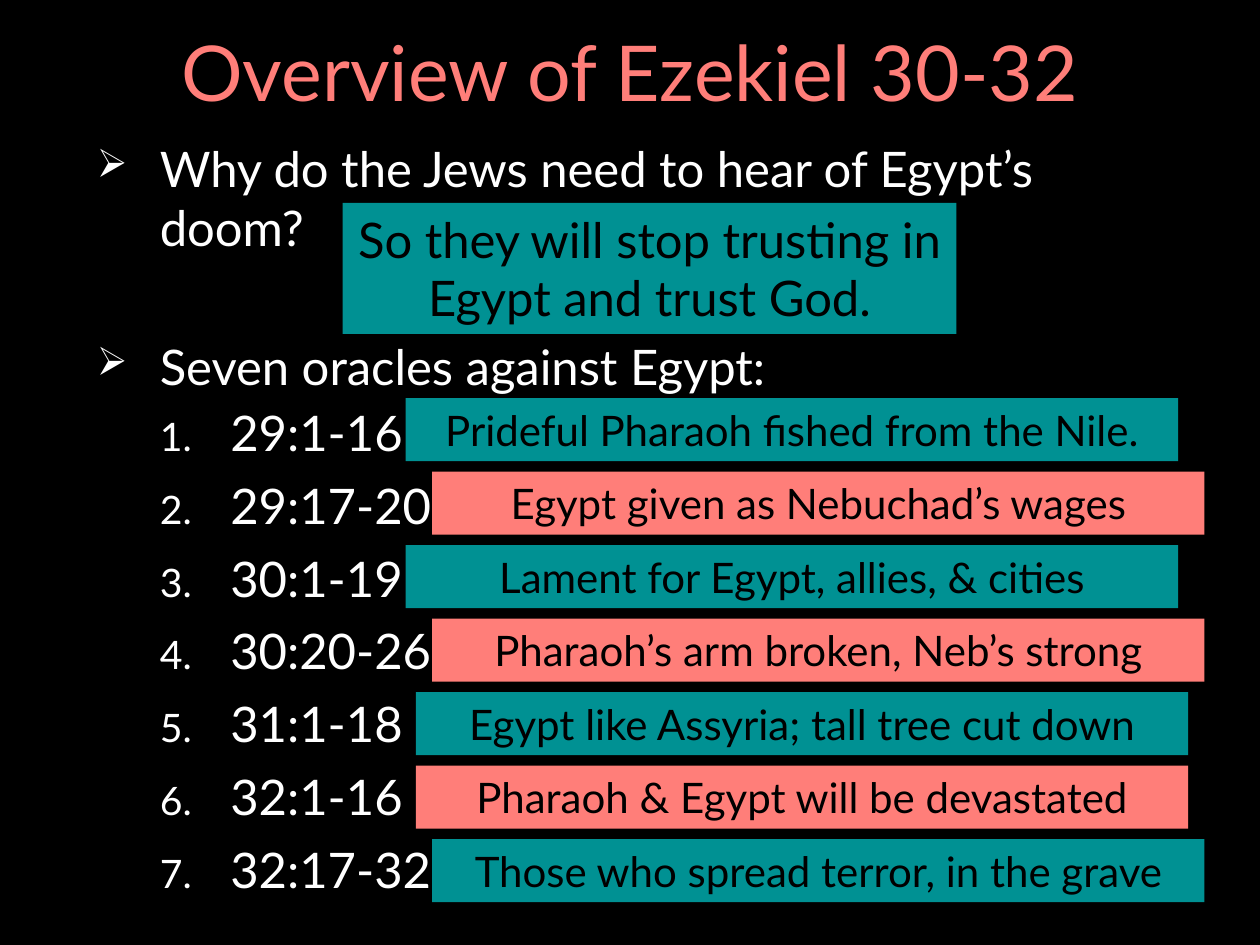
import pptx
import pptx.dml.color
import pptx.enum.shapes
import pptx.enum.text
import pptx.oxml.ns
import pptx.util
import lxml.etree
from dataclasses import dataclass

Inches, Pt = pptx.util.Inches, pptx.util.Pt
RGB = pptx.dml.color.RGBColor
CENTER = pptx.enum.text.PP_ALIGN.CENTER
MIDDLE = pptx.enum.text.MSO_ANCHOR.MIDDLE


@dataclass
class Theme:
    font: str = "Lato"
    black: RGB = RGB(0, 0, 0)
    white: RGB = RGB(255, 255, 255)
    teal: RGB = RGB(0x00, 0x91, 0x93)
    coral: RGB = RGB(0xFF, 0x7E, 0x79)
    title: int = 44
    body: int = 28
    label: int = 24


theme = Theme()


def style(para, size, color):
    para.font.name = theme.font
    para.font.size = Pt(size)
    para.font.color.rgb = color


def add_box(left, top, width, height, text, fill, size):
    box = slide.shapes.add_shape(
        pptx.enum.shapes.MSO_SHAPE.RECTANGLE,
        Inches(left), Inches(top), Inches(width), Inches(height))
    box.shadow.inherit = False
    box.fill.solid()
    box.fill.fore_color.rgb = fill
    box.line.fill.background()
    frame = box.text_frame
    frame.word_wrap = True
    frame.vertical_anchor = pptx.enum.text.MSO_ANCHOR.TOP
    para = frame.paragraphs[0]
    para.text = text
    para.alignment = CENTER
    style(para, size, theme.black)


# Slide
deck = pptx.Presentation()
deck.slide_width, deck.slide_height = Inches(10), Inches(7.5)
slide = deck.slides.add_slide(deck.slide_layouts[5])
slide.background.fill.solid()
slide.background.fill.fore_color.rgb = theme.black

# Title
title = slide.shapes.title
title.left, title.top = Inches(0.69), Inches(0.16)
title.width, title.height = Inches(8.62), Inches(0.9)
title.text_frame.vertical_anchor = MIDDLE
para = title.text_frame.paragraphs[0]
para.text = "Overview of Ezekiel 30-32"
para.alignment = CENTER
para.line_spacing = 0.9
style(para, theme.title, theme.coral)

# Oracles: verses, summary, left edge of the bar
oracles = [
    ("29:1-16", "Prideful Pharaoh fished from the Nile.", 3.22),
    ("29:17-20", "Egypt given as Nebuchad’s wages", 3.43),
    ("30:1-19", "Lament for Egypt, allies, & cities", 3.22),
    ("30:20-26", "Pharaoh’s arm broken, Neb’s strong", 3.43),
    ("31:1-18", "Egypt like Assyria; tall tree cut down", 3.3),
    ("32:1-16", "Pharaoh & Egypt will be devastated", 3.3),
    ("32:17-32", "Those who spread terror, in the grave", 3.43),
]

# Outline: text, level, space after
lines = [
    ("Why do the Jews need to hear of Egypt’s doom?", 0, 42),
    ("Seven oracles against Egypt:", 0, 0),
] + [(verses, 1, 4) for verses, _, _ in oracles]
indents = [(0.5, 0.5), (1.06, 0.56)]
marks = [("a:buChar", "char", "➢"), ("a:buAutoNum", "type", "arabicPeriod")]

body = slide.shapes.add_textbox(
    Inches(0.67), Inches(1.05), Inches(8.62), Inches(6.18))
frame = body.text_frame
frame.word_wrap = True
for i, (text, level, after) in enumerate(lines):
    para = frame.paragraphs[0] if i == 0 else frame.add_paragraph()
    para.text = text
    para.level = level
    para.space_before, para.space_after = Pt(4), Pt(after)
    # Bullet or number with a hanging indent
    props = para._p.get_or_add_pPr()
    margin, hang = indents[level]
    props.set("marL", str(Inches(margin)))
    props.set("indent", str(-Inches(hang)))
    tag, key, value = marks[level]
    for name, attr, val in [("a:buSzPct", "val", "80000"), (tag, key, value)]:
        lxml.etree.SubElement(props, pptx.oxml.ns.qn(name)).set(attr, val)
    style(para, theme.body, theme.white)

# Answer to the question
add_box(2.72, 1.61, 4.87, 1.04,
        "So they will stop trusting in Egypt and trust God.",
        theme.teal, theme.body)

# Summary bars in alternating colours
first, pitch = 3.16, 3.5 / 6
for i, (_, text, left) in enumerate(oracles):
    fill = theme.coral if i % 2 else theme.teal
    add_box(left, first + i * pitch, 6.13, 0.5, text, fill, theme.label)

deck.save("out.pptx")
